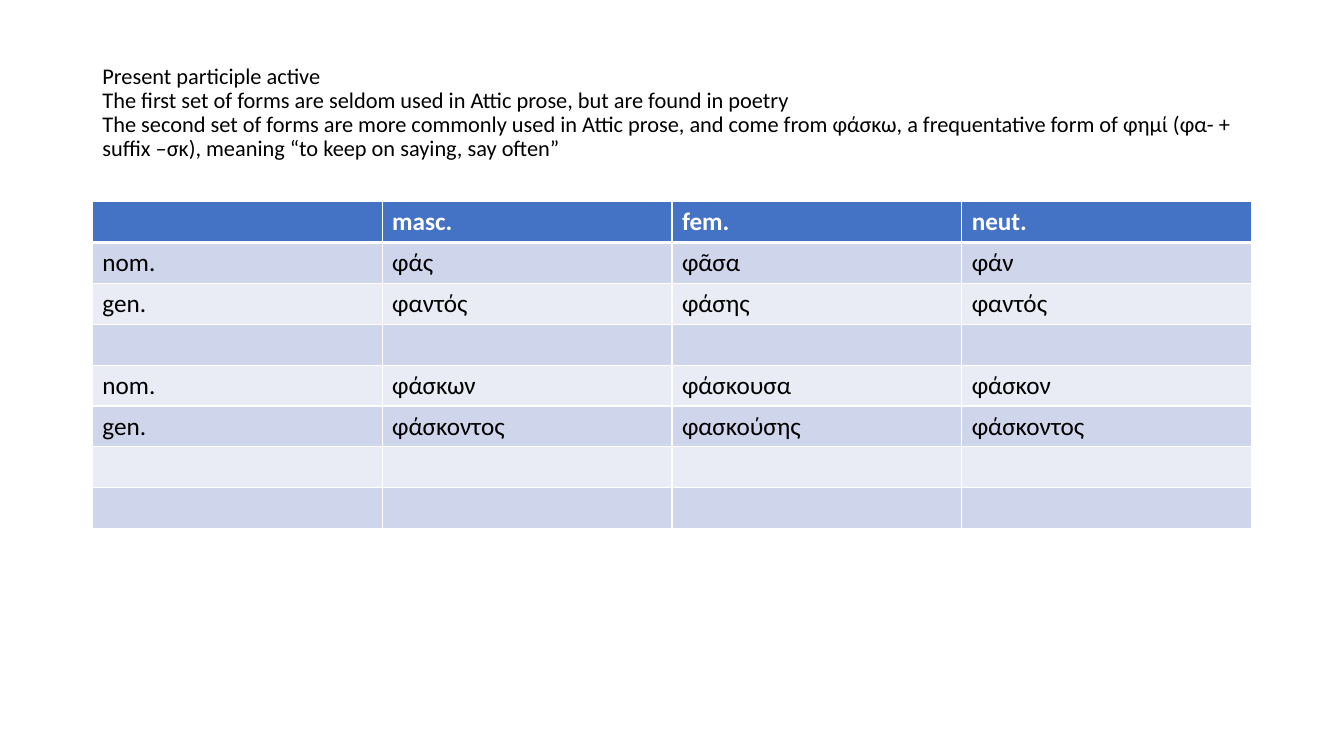
from lxml.etree import fromstring
from pptx import Presentation
from pptx.dml.color import RGBColor
from pptx.enum.text import MSO_ANCHOR, MSO_AUTO_SIZE, PP_ALIGN
from pptx.oxml.ns import nsdecls
from pptx.util import Pt

TITLE = (
    "Present participle active\n"
    "The first set of forms are seldom used in Attic prose, but are found in poetry\n"
    "The second set of forms are more commonly used in Attic prose, and come from φάσκω, "
    "a frequentative form of φημί (φα- + suffix –σκ), meaning “to keep on saying, say often”"
)
EMPTY_ROW = [""] * 4
PARTICIPLES = [
    ["", "masc.", "fem.", "neut."],
    ["nom.", "φάς", "φᾶσα", "φάν"],
    ["gen.", "φαντός", "φάσης", "φαντός"],
    EMPTY_ROW,
    ["nom.", "φάσκων", "φάσκουσα", "φάσκον"],
    ["gen.", "φάσκοντος", "φασκούσης", "φάσκοντος"],
    EMPTY_ROW,
    EMPTY_ROW,
]


def color(value):
    return RGBColor.from_string(value)


class SlideBuilder:
    font_name = "Calibri"
    text_color = "000000"
    header_color = "4472C4"
    header_text_color = "FFFFFF"
    band_colors = ("E9EBF5", "CFD5EA")
    border_color = "FFFFFF"

    def __init__(self, presentation):
        self.slide = presentation.slides.add_slide(presentation.slide_layouts[5])

    def format_font(self, paragraph, size, text_color, bold=False):
        font = paragraph.font
        font.name = self.font_name
        font.size = Pt(size)
        font.bold = bold
        font.color.rgb = color(text_color)

    def title(self, text, left, top, width, height):
        shape = self.slide.shapes.title
        shape.left, shape.top = Pt(left), Pt(top)
        shape.width, shape.height = Pt(width), Pt(height)
        frame = shape.text_frame
        frame.word_wrap = True
        frame.auto_size = MSO_AUTO_SIZE.NONE
        frame.vertical_anchor = MSO_ANCHOR.MIDDLE
        paragraph = frame.paragraphs[0]
        paragraph.text = text
        paragraph.alignment = PP_ALIGN.LEFT
        paragraph.line_spacing = 0.9
        self.format_font(paragraph, 16, self.text_color)

    def borders(self, cell, top, bottom):
        properties = cell._tc.get_or_add_tcPr()
        widths = {"lnL": 1, "lnR": 1, "lnT": top, "lnB": bottom}
        for position, (tag, width) in enumerate(widths.items()):
            line = fromstring(
                f'<a:{tag} {nsdecls("a")} w="{Pt(width)}"><a:solidFill>'
                f'<a:srgbClr val="{self.border_color}"/></a:solidFill></a:{tag}>'
            )
            properties.insert(position, line)

    def table(self, rows, left, top, width, height):
        shape = self.slide.shapes.add_table(
            len(rows), len(rows[0]), Pt(left), Pt(top), Pt(width), Pt(height)
        )
        for row_index, row in enumerate(rows):
            header = row_index == 0
            fill = self.header_color if header else self.band_colors[row_index % 2]
            text_color = self.header_text_color if header else self.text_color
            for column_index, text in enumerate(row):
                cell = shape.table.cell(row_index, column_index)
                cell.fill.solid()
                cell.fill.fore_color.rgb = color(fill)
                paragraph = cell.text_frame.paragraphs[0]
                paragraph.text = text
                self.format_font(paragraph, 18, text_color, header)
                self.borders(cell, 3 if row_index == 1 else 1, 3 if header else 1)


def main():
    presentation = Presentation()
    presentation.slide_width, presentation.slide_height = Pt(960), Pt(540)
    builder = SlideBuilder(presentation)
    builder.title(TITLE, 66, 28.75, 828, 104.4)
    builder.table(PARTICIPLES, 66, 144, 828, 233.6)
    presentation.save("out.pptx")


if __name__ == "__main__":
    main()
